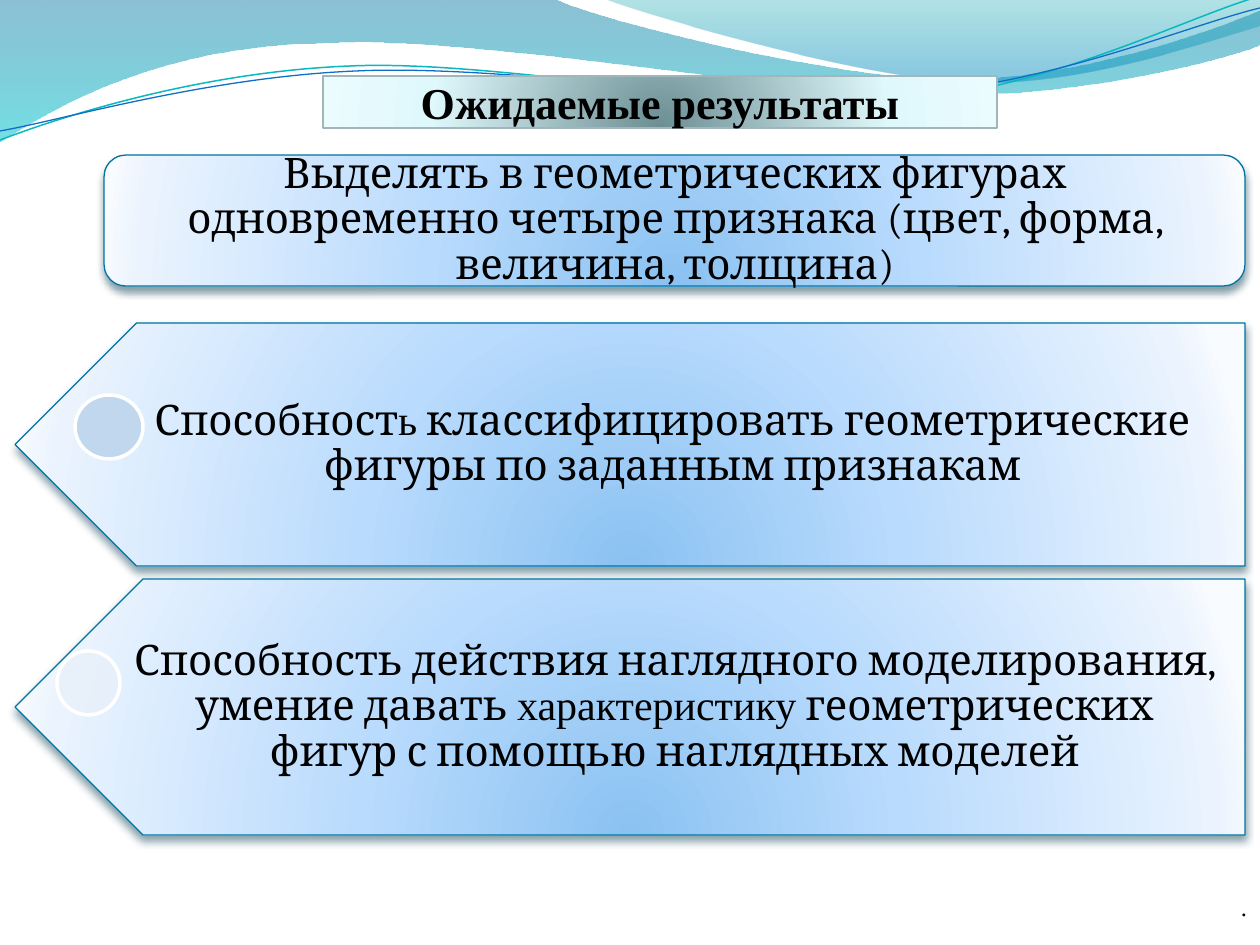
from dataclasses import dataclass
from typing import Optional

from lxml.etree import SubElement
from pptx import Presentation
from pptx.dml.color import RGBColor
from pptx.enum.shapes import MSO_SHAPE as Preset
from pptx.enum.text import MSO_ANCHOR as Anchor, PP_ALIGN as Align
from pptx.oxml.ns import qn
from pptx.util import Pt

EMU_PER_PX = 914400 / 126
SERIF, BODY = "Times New Roman", "Cambria"
COLORS = {
    "text": "000000", "white": "FFFFFF",
    "panel_line": "0074A1", "panel_shadow": "00374C", "title_line": "A2B5B9",
    "teal_line": "0AB8BF", "blue_line": "0F6FC6",
    "dot_blue": "BDD5ED", "dot_pale": "E8F0F8",
}


@dataclass
class Gradient:
    stops: list[tuple[int, str, int]]  # position %, colour, opacity %
    radial: bool = False


@dataclass
class Wave:
    start: tuple[int, int]
    segments: list[tuple[int, ...]]  # 2 numbers: line, 6 numbers: Bézier curve
    fill: Optional[Gradient] = None
    line: str = ""
    width: float = 0.75


@dataclass
class Panel:
    preset: Preset
    box: tuple[int, int, int, int]
    text_box: tuple[int, int, int, int]
    insets: tuple[int, int, int, int]
    runs: list[tuple[str, str]]  # wording, font
    rotation: int = 0


@dataclass
class Dot:
    box: tuple[int, int, int, int]
    color: str
    opacity: int


PANEL_FILL = Gradient([(0, "8BC2F1", 100), (43, "B9DBFD", 100),
                       (93, "EAF3FE", 100), (100, "F8FBFF", 100)], radial=True)
TITLE_FILL = Gradient([(0, "6C8F94", 100), (68, "DFF8FC", 100),
                       (100, "EBFCFF", 100)], radial=True)

WAVES = [
    Wave((0, 0), [(554, -1), (600, 21, 837, 79, 955, 79), (1075, 79, 1207, 33, 1260, 11),
                  (1261, 45), (1238, 55, 1096, 96, 940, 95), (783, 95, 481, 35, 324, 43),
                  (163, 45, 58, 105, -1, 142), (0, 0)],
         fill=Gradient([(0, "0074A1", 45), (100, "00C6CF", 55)])),
    Wave((604, -1), [(641, 14, 859, 78, 969, 82), (1079, 87, 1211, 40, 1260, 26),
                     (1260, 0), (604, -1)],
         fill=Gradient([(0, "00A1A9", 30), (80, "008BBF", 45)])),
    Wave((0, 140), [(60, 117, 199, 72, 349, 66), (498, 59, 747, 112, 898, 101),
                    (1050, 89, 1182, 19, 1257, -3)], line="teal_line", width=0.85),
    Wave((0, 131), [(59, 121, 207, 77, 357, 71), (508, 64, 752, 106, 903, 95),
                    (1053, 84, 1186, 26, 1260, 8)], line="blue_line"),
]

ARROW_INSETS = (48, 13, 24, 13)
PANELS = [
    Panel(Preset.ROUNDED_RECTANGLE, (104, 155, 1141, 131), (111, 161, 1128, 118),
          (13, 13, 13, 13),
          [("Выделять в геометрических фигурах одновременно четыре признака "
            "(цвет, форма, величина, толщина)", BODY)]),
    Panel(Preset.PENTAGON, (15, 323, 1230, 243), (76, 323, 1169, 243), ARROW_INSETS,
          [("Способност", BODY), ("ь", SERIF),
           (" классифицировать геометрические фигуры по заданным признакам", BODY)], 180),
    Panel(Preset.PENTAGON, (15, 579, 1230, 256), (79, 579, 1167, 256), ARROW_INSETS,
          [("Способность действия наглядного моделирования, умение давать ", BODY),
           ("характеристику", SERIF),
           (" геометрических фигур с помощью наглядных моделей", BODY)], 180),
]
DOTS = [Dot((75, 395, 68, 64), "dot_blue", 90), Dot((57, 651, 63, 64), "dot_pale", 50)]


def emu(px: float) -> int:
    return round(px * EMU_PER_PX)


def rgb(name: str) -> RGBColor:
    return RGBColor.from_string(COLORS[name])


def add_element(parent, tag: str, **attributes):
    return SubElement(parent, qn(tag), {key: str(value) for key, value in attributes.items()})


def add_color(parent, color: str, opacity: int) -> None:
    element = add_element(parent, "a:srgbClr", val=color)
    if opacity < 100:
        add_element(element, "a:alpha", val=opacity * 1000)


def set_gradient(shape, gradient: Gradient) -> None:
    shape.fill.gradient()
    fill = shape.element.spPr.find(qn("a:gradFill"))
    for child in list(fill):
        fill.remove(child)
    stops = add_element(fill, "a:gsLst")
    for position, color, opacity in gradient.stops:
        add_color(add_element(stops, "a:gs", pos=position * 1000), color, opacity)
    if gradient.radial:
        circle = add_element(fill, "a:path", path="circle")
        add_element(circle, "a:fillToRect", l=50000, t=130000, r=50000, b=-30000)
    else:
        add_element(fill, "a:lin", ang=5400000, scaled=1)


def set_line(shape, color: str, width: float) -> None:
    shape.line.color.rgb = rgb(color)
    shape.line.width = Pt(width)


def set_shadow(shape, color: str) -> None:
    effects = shape.element.spPr.find(qn("a:effectLst"))
    shadow = add_element(effects, "a:outerShdw", blurRad=Pt(4.5), dist=Pt(3),
                         dir=5400000, rotWithShape=0)
    add_color(shadow, COLORS[color], 48)


def bend_segments(shape, segments) -> None:
    """Join the three straight steps of each curved segment into one Bézier curve."""
    steps = iter(list(shape.element.spPr.iter(qn("a:lnTo"))))
    for segment in segments:
        first = next(steps)
        if len(segment) == 6:
            first.tag = qn("a:cubicBezTo")
            for step in (next(steps), next(steps)):
                first.append(step[0])
                step.getparent().remove(step)


def draw_wave(slide, wave: Wave) -> None:
    builder = slide.shapes.build_freeform(*map(emu, wave.start))
    vertices = [(emu(x), emu(y)) for segment in wave.segments
                for x, y in zip(segment[::2], segment[1::2])]
    builder.add_line_segments(vertices, close=wave.fill is not None)
    shape = builder.convert_to_shape()
    bend_segments(shape, wave.segments)
    shape.shadow.inherit = False
    if wave.fill:
        set_gradient(shape, wave.fill)
        shape.line.fill.background()
    else:
        shape.fill.background()
        set_line(shape, wave.line, wave.width)


def draw_shape(slide, preset: Preset, box, line: str, width: float = 0.75):
    shape = slide.shapes.add_shape(preset, *map(emu, box))
    shape.shadow.inherit = False
    set_line(shape, line, width)
    return shape


def write_text(shape, runs, size: float, align: Align, anchor: Anchor, insets,
               bold: bool = False, spacing: float = 1.0) -> None:
    frame = shape.text_frame
    frame.word_wrap = True
    frame.vertical_anchor = anchor
    (frame.margin_left, frame.margin_top,
     frame.margin_right, frame.margin_bottom) = map(emu, insets)
    paragraph = frame.paragraphs[0]
    paragraph.alignment = align
    paragraph.line_spacing = spacing
    for wording, font_name in runs:
        run = paragraph.add_run()
        run.text = wording
        run.font.name = font_name
        run.font.size = Pt(size)
        run.font.bold = bold
        run.font.color.rgb = rgb("text")


def draw_panel(slide, panel: Panel) -> None:
    shape = draw_shape(slide, panel.preset, panel.box, "panel_line")
    shape.rotation = panel.rotation
    set_gradient(shape, PANEL_FILL)
    set_shadow(shape, "panel_shadow")
    text_box = slide.shapes.add_textbox(*map(emu, panel.text_box))
    write_text(text_box, panel.runs, 24, Align.CENTER, Anchor.MIDDLE, panel.insets, spacing=0.9)


def draw_dot(slide, dot: Dot) -> None:
    shape = draw_shape(slide, Preset.OVAL, dot.box, "white", 2)
    shape.fill.solid()
    shape.fill.fore_color.rgb = rgb(dot.color)
    color = shape.element.spPr.find(qn("a:solidFill")).find(qn("a:srgbClr"))
    add_element(color, "a:alpha", val=dot.opacity * 1000)


def main() -> None:
    presentation = Presentation()
    presentation.slide_width, presentation.slide_height = emu(1260), emu(945)
    slide = presentation.slides.add_slide(presentation.slide_layouts[6])

    # Waves along the top
    for wave in WAVES:
        draw_wave(slide, wave)

    # Title
    title = draw_shape(slide, Preset.RECTANGLE, (323, 76, 674, 52), "title_line")
    set_gradient(title, TITLE_FILL)
    write_text(title, [("Ожидаемые результаты", SERIF)], 25.2, Align.CENTER, Anchor.BOTTOM,
               (0, 6, 0, 0), bold=True)

    # Expected results
    for panel in PANELS:
        draw_panel(slide, panel)
    for dot in DOTS:
        draw_dot(slide, dot)

    # Closing full stop
    footer = slide.shapes.add_textbox(*map(emu, (867, 886, 393, 81)))
    write_text(footer, [(".", SERIF)], 14, Align.RIGHT, Anchor.TOP, (13, 6, 13, 6))

    presentation.save("out.pptx")


if __name__ == "__main__":
    main()
